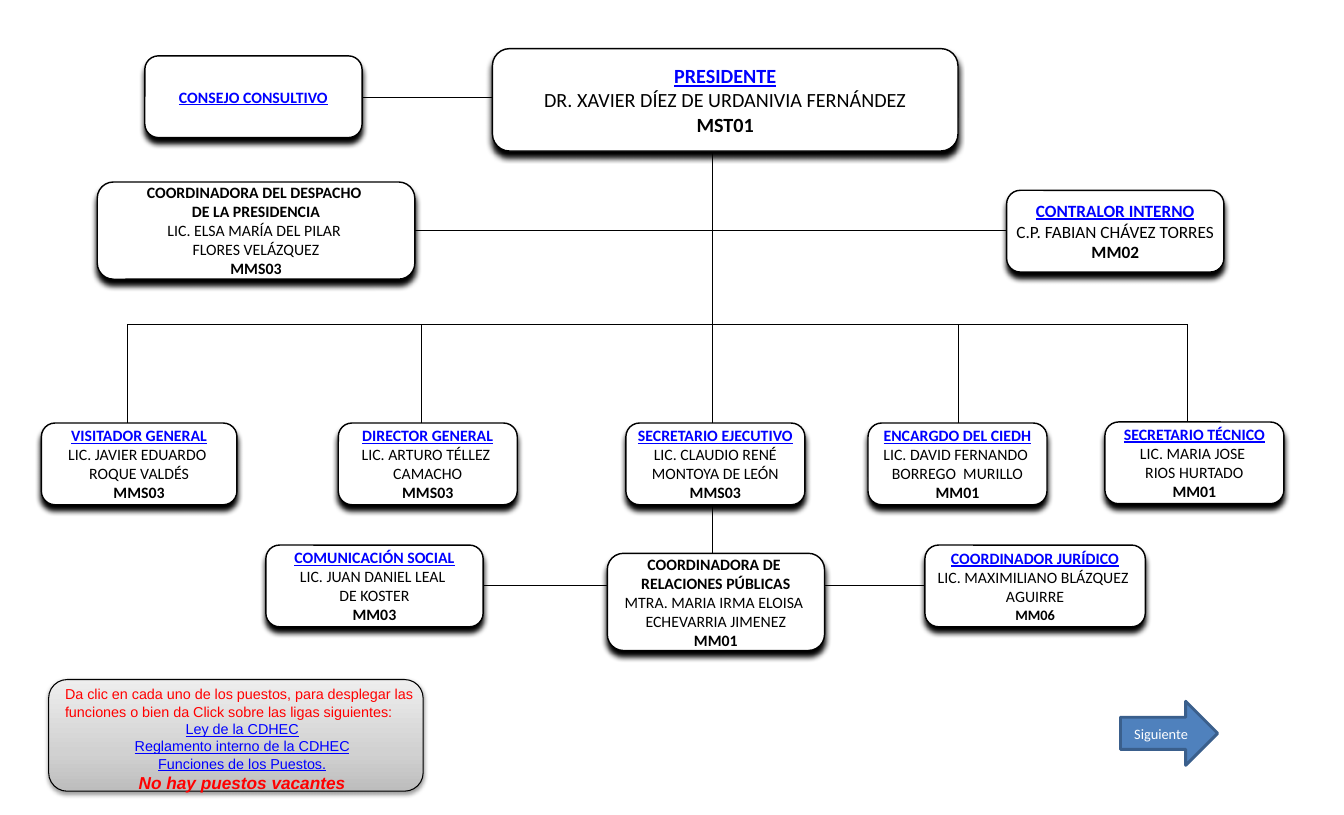
from copy import deepcopy

from lxml.etree import SubElement
from pptx import Presentation
from pptx.dml.color import RGBColor
from pptx.enum.shapes import MSO_CONNECTOR, MSO_SHAPE
from pptx.enum.text import MSO_ANCHOR, MSO_AUTO_SIZE, PP_ALIGN
from pptx.oxml.ns import qn
from pptx.util import Inches, Pt

BLACK = RGBColor(0x00, 0x00, 0x00)
WHITE = RGBColor(0xFF, 0xFF, 0xFF)
LINK_BLUE = RGBColor(0x00, 0x00, 0xFF)
RED = RGBColor(0xFF, 0x00, 0x00)
ARROW_FILL = RGBColor(0x4F, 0x81, 0xBD)
ARROW_LINE = RGBColor(0x3A, 0x5F, 0x8C)
PANEL_STOPS = [
    (0, RGBColor(0xBD, 0xBD, 0xBD)),
    (0.35, RGBColor(0xD1, 0xD1, 0xD1)),
    (1, RGBColor(0xEE, 0xEE, 0xEE)),
]

TRUNK_X, BRANCH_Y, OFFICE_Y = 6.89, 3.14, 4.09
STAFF_Y, SUPPORT_Y = 2.23, 5.66

# Left, top, width, height, text size, linked title, title, person, code
POSTS = [
    (1.4, 0.54, 2.1, 0.79, 11, True, ["CONSEJO CONSULTIVO"], [], []),
    (4.76, 0.47, 4.5, 0.99, 14, True, ["PRESIDENTE"],
     ["DR. XAVIER DÍEZ DE URDANIVIA FERNÁNDEZ"], ["MST01"]),
    (0.94, 1.76, 3.07, 0.94, 11, False,
     ["COORDINADORA DEL DESPACHO ", "DE LA PRESIDENCIA"],
     ["LIC. ELSA MARÍA DEL PILAR ", "FLORES VELÁZQUEZ"], ["MMS03"]),
    (9.73, 1.84, 2.1, 0.79, 12, True, ["CONTRALOR INTERNO"],
     ["C.P. FABIAN CHÁVEZ TORRES"], ["MM02"]),
    (0.4, OFFICE_Y, 1.89, 0.79, 11, True, ["VISITADOR GENERAL"],
     ["LIC. JAVIER EDUARDO ", "ROQUE VALDÉS"], ["MMS03"]),
    (3.27, OFFICE_Y, 1.73, 0.79, 11, True, ["DIRECTOR GENERAL"],
     ["LIC. ARTURO TÉLLEZ ", "CAMACHO"], ["MMS03"]),
    (6.05, OFFICE_Y, 1.73, 0.79, 11, True, ["SECRETARIO EJECUTIVO"],
     ["LIC. CLAUDIO RENÉ", "MONTOYA DE LEÓN"], ["MMS03"]),
    (8.39, OFFICE_Y, 1.73, 0.79, 11, True, ["ENCARGDO DEL CIEDH"],
     ["LIC. DAVID FERNANDO ", "BORREGO  MURILLO"], ["MM01"]),
    (10.68, 4.08, 1.73, 0.79, 11, True, ["SECRETARIO TÉCNICO"],
     ["LIC. MARIA JOSE ", "RIOS HURTADO"], ["MM01"]),
    (2.57, 5.27, 2.1, 0.79, 11, True, ["COMUNICACIÓN SOCIAL"],
     ["LIC. JUAN DANIEL LEAL ", "DE KOSTER"], ["MM03"]),
    (5.87, 5.35, 2.1, 0.94, 11, False,
     ["COORDINADORA DE ", "RELACIONES PÚBLICAS"],
     ["MTRA. MARIA IRMA ELOISA ", "ECHEVARRIA JIMENEZ"], ["MM01"]),
    (8.94, 5.27, 2.13, 0.79, 11, True, ["COORDINADOR JURÍDICO"],
     ["LIC. MAXIMILIANO BLÁZQUEZ ", "AGUIRRE"], ["MM06"]),
]
SMALL_CODE = "MM06"

# Start x, start y, end x, end y
LINES = [
    (3.51, 0.94, 4.76, 0.94),
    (TRUNK_X, 1.3, TRUNK_X, SUPPORT_Y),
    (3.93, STAFF_Y, 10.2, STAFF_Y),
    (1.23, BRANCH_Y, 11.48, BRANCH_Y),
    (3.75, SUPPORT_Y, 8.94, SUPPORT_Y),
] + [(x, BRANCH_Y, x, 4.65) for x in (1.23, 4.07, 9.26, 11.48)]

NOTICE = ("Da clic en cada uno de los puestos, para desplegar las funciones "
          "o bien da Click sobre las ligas siguientes:")
DOCUMENTS = ["Ley de la CDHEC", "Reglamento interno de la CDHEC",
             "Funciones de los Puestos."]
VACANCIES = "No hay puestos vacantes"


def format_paragraph(paragraph, font_name, size, color, bold=False,
                     underline=False, align=PP_ALIGN.CENTER):
    paragraph.alignment = align
    for run in paragraph.runs:
        font = run.font
        font.name, font.size = font_name, Pt(size)
        font.color.rgb = color
        font.bold, font.underline = bold, underline


def add_shadow(shape, blur, distance, opacity):
    shape.shadow.inherit = False
    effects = shape._element.spPr.find(qn("a:effectLst"))
    shadow = SubElement(effects, qn("a:outerShdw"), blurRad=str(Pt(blur)),
                        dist=str(Pt(distance)), dir="5400000",
                        rotWithShape="0")
    color = SubElement(shadow, qn("a:srgbClr"), val=str(BLACK))
    SubElement(color, qn("a:alpha"), val=str(opacity * 1000))


def add_box(slide, preset, left, top, width, height, line_color, line_width):
    shape = slide.shapes.add_shape(preset, Inches(left), Inches(top),
                                   Inches(width), Inches(height))
    shape.shadow.inherit = False
    shape.line.color.rgb = line_color
    shape.line.width = Pt(line_width)
    return shape


def add_line(slide, start_x, start_y, end_x, end_y):
    line = slide.shapes.add_connector(
        MSO_CONNECTOR.STRAIGHT, Inches(start_x), Inches(start_y),
        Inches(end_x), Inches(end_y))
    line.line.color.rgb = BLACK
    line.line.width = Pt(0.75)
    SubElement(line._element.spPr, qn("a:effectLst"))


def add_post(slide, left, top, width, height, size, linked, title, person, code):
    shape = add_box(slide, MSO_SHAPE.ROUNDED_RECTANGLE, left, top, width,
                    height, BLACK, 1)
    shape.fill.solid()
    shape.fill.fore_color.rgb = WHITE
    add_shadow(shape, 4, 4, 100)
    frame = shape.text_frame
    frame.word_wrap = False
    frame.vertical_anchor = MSO_ANCHOR.MIDDLE
    frame.margin_left = frame.margin_right = Inches(0.17)
    frame.margin_top = frame.margin_bottom = Inches(0.09)
    frame.text = "\n".join(title + person + code)
    for index, paragraph in enumerate(frame.paragraphs):
        is_title = index < len(title)
        is_person = not is_title and index < len(title) + len(person)
        is_link = is_title and linked
        format_paragraph(paragraph, "Calibri",
                         10 if paragraph.text == SMALL_CODE else size,
                         LINK_BLUE if is_link else BLACK,
                         bold=not is_person, underline=is_link)


def add_panel(slide):
    panel = add_box(slide, MSO_SHAPE.ROUNDED_RECTANGLE, 0.47, 6.57, 3.62,
                    1.08, BLACK, 0.75)
    panel.fill.gradient()
    panel.fill.gradient_angle = 90
    stop_list = panel._element.spPr.find(".//" + qn("a:gsLst"))
    stop_list.append(deepcopy(stop_list[0]))
    for stop, (position, color) in zip(panel.fill.gradient_stops, PANEL_STOPS):
        stop.position = position
        stop.color.rgb = color
    add_shadow(panel, 3.1, 1.6, 38)


def add_notice(slide):
    text_box = slide.shapes.add_textbox(Inches(0.53), Inches(6.58),
                                        Inches(3.62), Inches(1.14))
    frame = text_box.text_frame
    frame.word_wrap = True
    frame.auto_size = MSO_AUTO_SIZE.SHAPE_TO_FIT_TEXT
    frame.text = "\n".join([NOTICE, *DOCUMENTS, VACANCIES])
    notice, *documents, vacancies = frame.paragraphs
    format_paragraph(notice, "Arial", 10, RED, align=PP_ALIGN.LEFT)
    for paragraph in documents:
        format_paragraph(paragraph, "Arial", 10, LINK_BLUE, underline=True)
    format_paragraph(vacancies, "Arial", 12, RED, bold=True)
    vacancies.runs[0].font.italic = True


def add_next_arrow(slide):
    arrow = add_box(slide, MSO_SHAPE.RIGHT_ARROW, 10.83, 6.78, 0.94, 0.62,
                    ARROW_LINE, 2)
    arrow.fill.solid()
    arrow.fill.fore_color.rgb = ARROW_FILL
    arrow.text_frame.text = "Siguiente"
    arrow.text_frame.vertical_anchor = MSO_ANCHOR.MIDDLE
    format_paragraph(arrow.text_frame.paragraphs[0], "Calibri", 10, WHITE)


def main():
    presentation = Presentation()
    presentation.slide_width = Inches(12.99)
    presentation.slide_height = Inches(7.88)
    slide = presentation.slides.add_slide(presentation.slide_layouts[6])

    # Organisation chart
    for line in LINES:
        add_line(slide, *line)
    for post in POSTS:
        add_post(slide, *post)

    # Reading notice and navigation
    add_panel(slide)
    add_notice(slide)
    add_next_arrow(slide)

    presentation.save("out.pptx")


if __name__ == "__main__":
    main()
